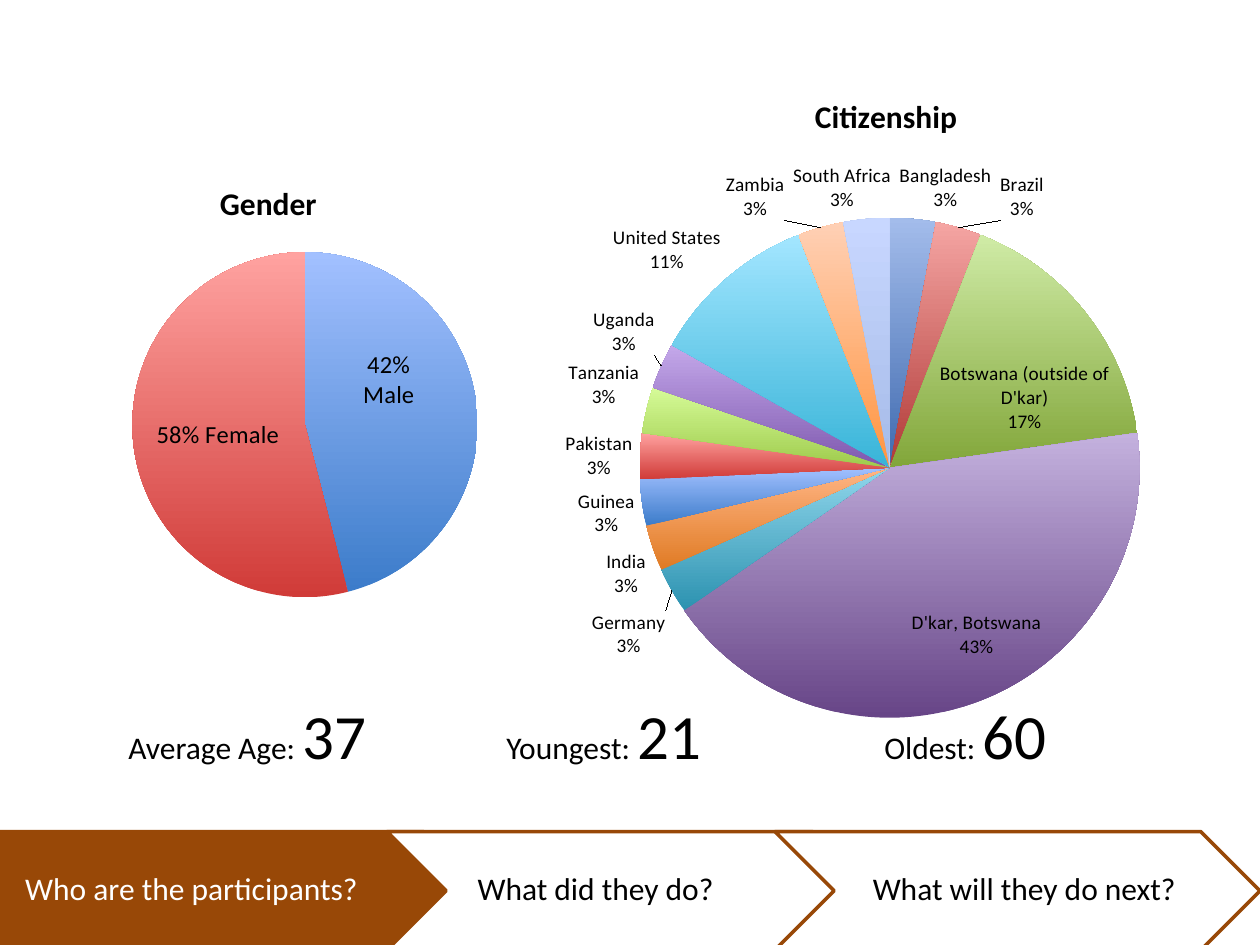
import pptx
import pptx.chart.data
import pptx.dml.color
import pptx.enum.chart
import pptx.enum.shapes
import pptx.enum.text
import pptx.oxml
import pptx.util
from pptx.oxml.ns import nsdecls

Inches, Pt = pptx.util.Inches, pptx.util.Pt
RGBColor = pptx.dml.color.RGBColor
MSO_SHAPE = pptx.enum.shapes.MSO_SHAPE
LabelPosition = pptx.enum.chart.XL_LABEL_POSITION

FONT = "Calibri"
BLACK = RGBColor(0x00, 0x00, 0x00)
WHITE = RGBColor(0xFF, 0xFF, 0xFF)
BROWN = RGBColor(0x98, 0x48, 0x07)
BLUE = (RGBColor(0x3C, 0x7C, 0xCA), RGBColor(0xA2, 0xC0, 0xFF))
RED = (RGBColor(0xD0, 0x3B, 0x38), RGBColor(0xFF, 0xA2, 0xA0))

# Name, value, and the gradient of the slice from bottom to top
COUNTRIES = [
    ("Bangladesh", 3, (RGBColor(0x3F, 0x6A, 0xAF), RGBColor(0xA3, 0xBC, 0xEB))),
    ("Brazil", 3, (RGBColor(0xB0, 0x3A, 0x37), RGBColor(0xF5, 0xA5, 0xA3))),
    ("Botswana (outside of D'kar)", 17, (RGBColor(0x82, 0xA6, 0x3A), RGBColor(0xCF, 0xEB, 0xA6))),
    ("D'kar, Botswana", 43, (RGBColor(0x67, 0x45, 0x87), RGBColor(0xC4, 0xB1, 0xDE))),
    ("Germany", 3, (RGBColor(0x2C, 0x92, 0xB0), RGBColor(0x90, 0xD6, 0xEB))),
    ("India", 3, (RGBColor(0xE0, 0x7B, 0x24), RGBColor(0xFF, 0xB5, 0x85))),
    ("Guinea", 3, BLUE),
    ("Pakistan", 3, RED),
    ("Tanzania", 3, (RGBColor(0x9E, 0xCB, 0x4C), RGBColor(0xD6, 0xFB, 0x98))),
    ("Uganda", 3, (RGBColor(0x7E, 0x58, 0xAE), RGBColor(0xC4, 0xA8, 0xEA))),
    ("United States", 11, (RGBColor(0x38, 0xB4, 0xD8), RGBColor(0xA3, 0xE6, 0xFF))),
    ("Zambia", 3, (RGBColor(0xFF, 0x95, 0x40), RGBColor(0xFF, 0xD0, 0xB5))),
    ("South Africa", 3, (RGBColor(0xA5, 0xBB, 0xE8), RGBColor(0xC8, 0xD7, 0xFF))),
]
GENDERS = [("1", 46, BLUE), ("2", 54, RED)]
# Label and its shift as a share of the chart
GENDER_LABELS = [("42%\nMale", -0.07, -0.12), ("58% Female", 0.02, 0.01)]
AGES = [("Average Age: ", "37"), ("\tYoungest: ", "21"), ("\tOldest: ", "60")]


def style(font, size, color=BLACK, bold=None):
    font.name, font.size, font.bold = FONT, Pt(size), bold
    font.color.rgb = color


def set_layout(parent, index, head="", **shares):
    """Replace the manual layout of a chart part; shares are of the chart size."""
    for old in parent.xpath("./c:layout"):
        parent.remove(old)
    values = "".join(f'<c:{k} val="{v:.3f}"/>' for k, v in shares.items())
    parent.insert(index, pptx.oxml.parse_xml(
        f'<c:layout {nsdecls("c")}><c:manualLayout>{head}{values}'
        "</c:manualLayout></c:layout>"))


def add_pie(slide, box, title, slices, pie, title_at, label_size, position):
    """Add a pie chart; pie is left, top, diameter and title_at left, top, in inches."""
    x, y, w, h = box
    data = pptx.chart.data.CategoryChartData()
    data.categories = [name for name, _, _ in slices]
    data.add_series("Series 1", [value for _, value, _ in slices])
    chart = slide.shapes.add_chart(
        pptx.enum.chart.XL_CHART_TYPE.PIE, *map(Inches, box), data).chart
    style(chart.font, 10)
    chart.has_legend = False
    chart.has_title = True
    tf = chart.chart_title.text_frame
    tf.text = title
    style(tf.paragraphs[0].font, 18, bold=True)

    plot = chart.plots[0]
    edge = '<c:xMode val="edge"/><c:yMode val="edge"/>'
    set_layout(plot._element.getparent(), 0, '<c:layoutTarget val="inner"/>' + edge,
               x=(pie[0] - x) / w, y=(pie[1] - y) / h, w=pie[2] / w, h=pie[2] / h)
    set_layout(chart.chart_title._element, 1, edge,
               x=(title_at[0] - x) / w, y=(title_at[1] - y) / h)

    plot.vary_by_categories = True
    for i, (_, _, colors) in enumerate(slices):
        fill = plot.series[0].points[i].format.fill
        fill.gradient()
        fill.gradient_angle = 90
        for stop, color in zip(fill.gradient_stops, colors):
            stop.color.rgb = color

    labels = plot.series[0].data_labels
    style(labels.font, label_size)
    labels.show_category_name = labels.show_percentage = True
    labels.show_value = False
    labels.position = position
    leader = labels._element.xpath("./c:showLeaderLines")
    if leader:
        leader[0].set("val", "1")
    else:
        labels._element.append(pptx.oxml.parse_xml(
            f'<c:showLeaderLines {nsdecls("c")} val="1"/>'))
    labels._element.xpath("./c:showBubbleSize")[0].addnext(
        pptx.oxml.parse_xml(f'<c:separator {nsdecls("c")}>\n</c:separator>'))
    return chart


def name_genders(chart):
    series = chart.plots[0].series[0]
    for point, (text, dx, dy) in enumerate(GENDER_LABELS):
        label = series.points[point].data_label
        label.text_frame.text = text
        for p in label.text_frame.paragraphs:
            style(p.font, 14)
        label.position = LabelPosition.INSIDE_END
        d_lbl = series._element.xpath(f"./c:dLbls/c:dLbl[c:idx/@val='{point}']")[0]
        set_layout(d_lbl, 1, x=dx, y=dy)


def add_ages(slide, box, column):
    """Add the ages on one line, with a tab stop at each column width."""
    tf = slide.shapes.add_textbox(*map(Inches, box)).text_frame
    tf.word_wrap = True
    p = tf.paragraphs[0]
    stops = "".join(f'<a:tab pos="{Inches(column * i)}" algn="l"/>'
                    for i in range(1, len(AGES)))
    p._p.get_or_add_pPr().append(pptx.oxml.parse_xml(
        f'<a:tabLst {nsdecls("a")}>{stops}</a:tabLst>'))
    for caption, age in AGES:
        for text, size in ((caption, 18), (age, 36)):
            r = p.add_run()
            r.text = text
            style(r.font, size)


def add_step(shapes, kind, box, fill, text, text_box, color, inset, align):
    sp = shapes.add_shape(kind, *map(Inches, box))
    sp.shadow.inherit = False
    sp.fill.solid()
    sp.fill.fore_color.rgb = fill
    sp.line.color.rgb = BROWN
    sp.line.width = Pt(2)

    tf = shapes.add_textbox(*map(Inches, text_box)).text_frame
    tf.word_wrap = True
    tf.vertical_anchor = pptx.enum.text.MSO_ANCHOR.MIDDLE
    tf.margin_left, tf.margin_right = Inches(inset), Inches(0.03)
    p = tf.paragraphs[0]
    p.text, p.alignment, p.line_spacing = text, align, 0.9
    style(p.font, 18, color)


def add_steps(slide, top, width, height):
    shapes = slide.shapes.add_group_shape().shapes
    left, center = pptx.enum.text.PP_ALIGN.LEFT, pptx.enum.text.PP_ALIGN.CENTER
    add_step(shapes, MSO_SHAPE.PENTAGON, (-0.02, top, width, height), BROWN,
             "Who are the participants?", (-0.02, top, 3.61, height), WHITE, 0.22, left)
    notch = height / 2
    for x, text, inset, align in ((3.07, "What did they do?", 0.25, left),
                                  (6.15, "What will they do next?", 0.14, center)):
        add_step(shapes, MSO_SHAPE.CHEVRON, (x, top, width, height), WHITE, text,
                 (x + notch, top, width - 2 * notch, height), BLACK, inset, align)


def main():
    prs = pptx.Presentation()
    prs.slide_width, prs.slide_height = Inches(10), Inches(7.5)
    slide = prs.slides.add_slide(prs.slide_layouts[6])
    add_pie(slide, (3.58, 0.55, 6.9, 5.29), "Citizenship", COUNTRIES,
            (5.08, 1.73, 3.97), (6.42, 0.71), 11, LabelPosition.BEST_FIT)
    gender = add_pie(slide, (-0.95, 1.28, 6.15, 3.59), "Gender", GENDERS,
                     (1.05, 2, 2.74), (1.7, 1.4), 14, LabelPosition.INSIDE_END)
    name_genders(gender)
    add_ages(slide, (0.92, 5.48, 8.47, 1.01), 3)
    add_steps(slide, 6.6, 3.85, 0.94)
    prs.save("out.pptx")


if __name__ == "__main__":
    main()
